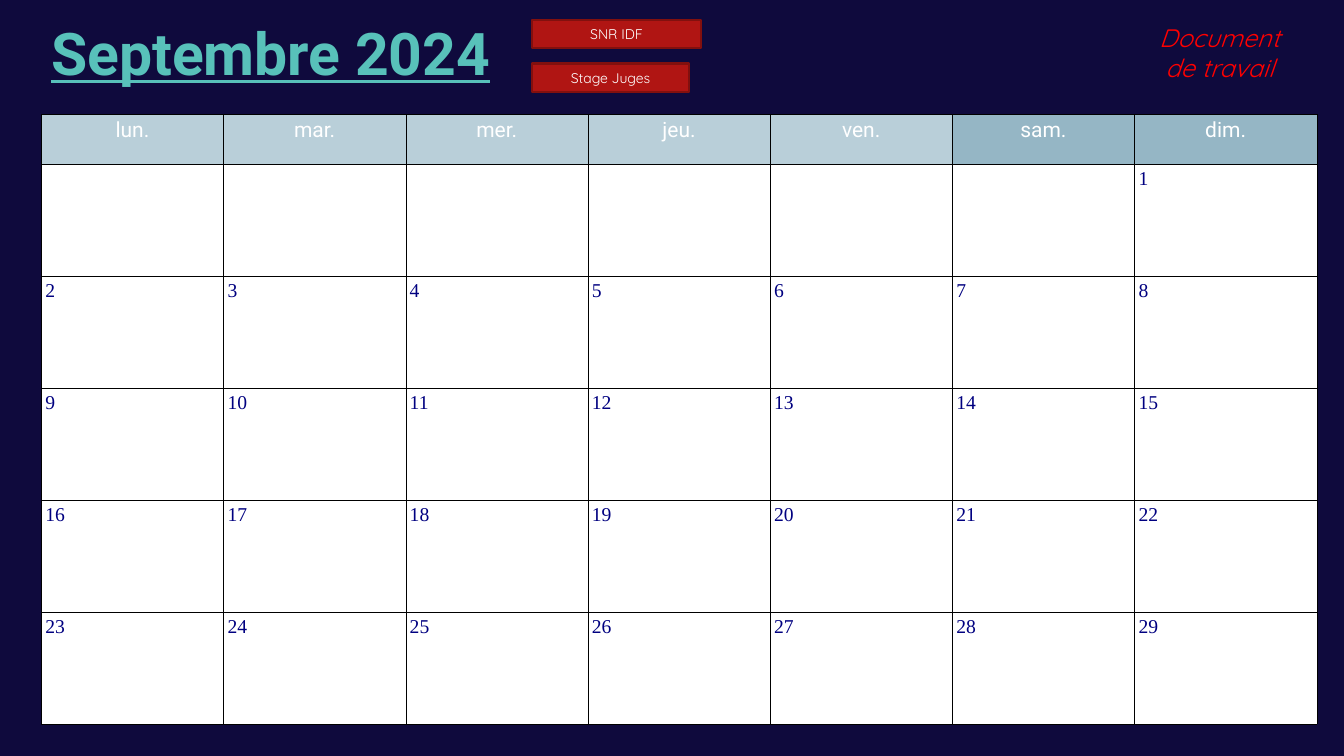
from dataclasses import dataclass

from lxml.etree import SubElement
from pptx import Presentation
from pptx.dml.color import RGBColor as Color
from pptx.enum.shapes import MSO_SHAPE as Shape
from pptx.enum.text import MSO_ANCHOR as Anchor, MSO_AUTO_SIZE as AutoSize, PP_ALIGN as Align
from pptx.oxml.ns import qn
from pptx.util import Inches, Pt


@dataclass(frozen=True)
class Theme:
    backdrop: str = "000000"
    night: str = "0F0A3D"
    teal: str = "58C1BA"
    white: str = "FFFFFF"
    weekday: str = "B9CFD9"
    weekend: str = "95B6C5"
    date: str = "000080"
    grid: str = "000000"
    event: str = "B01513"
    event_edge: str = "82100E"
    draft: str = "FF0000"
    title_size: int = 42
    draft_size: int = 18
    header_size: int = 15
    date_size: int = 14
    event_size: int = 10


theme = Theme()


def style_text(frame, font, size, color, align=Align.LEFT):
    para = frame.paragraphs[0]
    para.alignment = align
    span = para.runs[0]
    span.font.name = font
    span.font.size = Pt(size)
    span.font.color.rgb = Color.from_string(color)
    return span.font


def add_bar(page, left, top, width, height, fill):
    bar = page.shapes.add_shape(Shape.RECTANGLE, left, top, width, height)
    bar.shadow.inherit = False
    bar.fill.solid()
    bar.fill.fore_color.rgb = Color.from_string(fill)
    bar.line.fill.background()
    return bar


deck = Presentation()
deck.slide_width, deck.slide_height = Inches(13.33), Inches(7.5)
page = deck.slides.add_slide(deck.slide_layouts[5])

# Background
page.background.fill.solid()
page.background.fill.fore_color.rgb = Color.from_string(theme.backdrop)
add_bar(page, 0, 0, deck.slide_width, deck.slide_height, theme.night)

# Calendar grid
days = ["lun.", "mar.", "mer.", "jeu.", "ven.", "sam.", "dim."]
weeks, first_column, last_date = 5, 6, 29
left, top, column_width = Inches(0.41), Inches(1.13), Inches(12.65 / 7)
header_height, week_height = Inches(0.5), Inches(1.11)
calendar = page.shapes.add_table(
    weeks + 1, len(days), left, top,
    column_width * len(days), header_height + week_height * weeks).table
calendar.first_row = calendar.horz_banding = False
for column in calendar.columns:
    column.width = column_width
for index, row in enumerate(calendar.rows):
    row.height = week_height if index else header_height
    for weekday, cell in enumerate(row.cells):
        cell.margin_left = cell.margin_right = Inches(0.04)
        cell.margin_top = cell.margin_bottom = Inches(0.04)
        cell.vertical_anchor = Anchor.TOP
        properties = cell._tc.get_or_add_tcPr()
        for side in ("a:lnL", "a:lnR", "a:lnT", "a:lnB"):
            border = SubElement(properties, qn(side), w=str(Pt(0.25)))
            paint = SubElement(border, qn("a:solidFill"))
            SubElement(paint, qn("a:srgbClr"), val=theme.grid)
        cell.fill.solid()
        if index == 0:
            fill = theme.weekend if weekday >= 5 else theme.weekday
            cell.text_frame.text = days[weekday]
            style_text(cell.text_frame, "Roboto", theme.header_size, theme.white, Align.CENTER)
        else:
            fill = theme.white
            date = (index - 1) * len(days) + weekday - first_column + 1
            if 1 <= date <= last_date:
                cell.text_frame.text = str(date)
                style_text(cell.text_frame, "Times New Roman", theme.date_size, theme.date)
        cell.fill.fore_color.rgb = Color.from_string(fill)

# Month title, brought in front of the calendar
title = page.shapes.title
title.element.getparent().append(title.element)
title.left, title.top, title.width, title.height = left, Inches(0.12), Inches(10.29), Inches(1.53)
title.text_frame.text = "Septembre 2024"
title.text_frame.vertical_anchor = Anchor.TOP
title.text_frame.auto_size = AutoSize.NONE
title_font = style_text(title.text_frame, "Roboto", theme.title_size, theme.teal)
title_font.bold = title_font.underline = True

# Event labels
events = [("SNR IDF", 0.2, 1.67), ("Stage Juges", 0.63, 1.55)]
for name, event_top, width in events:
    label = add_bar(page, Inches(5.28), Inches(event_top), Inches(width), Inches(0.28), theme.event)
    label.line.color.rgb = Color.from_string(theme.event_edge)
    label.line.width = Pt(1.5)
    label.text_frame.text = name
    label.text_frame.vertical_anchor = Anchor.MIDDLE
    style_text(label.text_frame, "Quicksand", theme.event_size, theme.white, Align.CENTER)

# Draft notice
notice = page.shapes.add_textbox(Inches(11.27), Inches(0.17), Inches(1.65), Inches(0.71))
notice.text_frame.word_wrap = True
notice.text_frame.auto_size = AutoSize.SHAPE_TO_FIT_TEXT
notice.text_frame.text = "Document de travail"
notice_font = style_text(
    notice.text_frame, "Quicksand", theme.draft_size, theme.draft, Align.CENTER)
notice_font.italic = True

deck.save("out.pptx")
